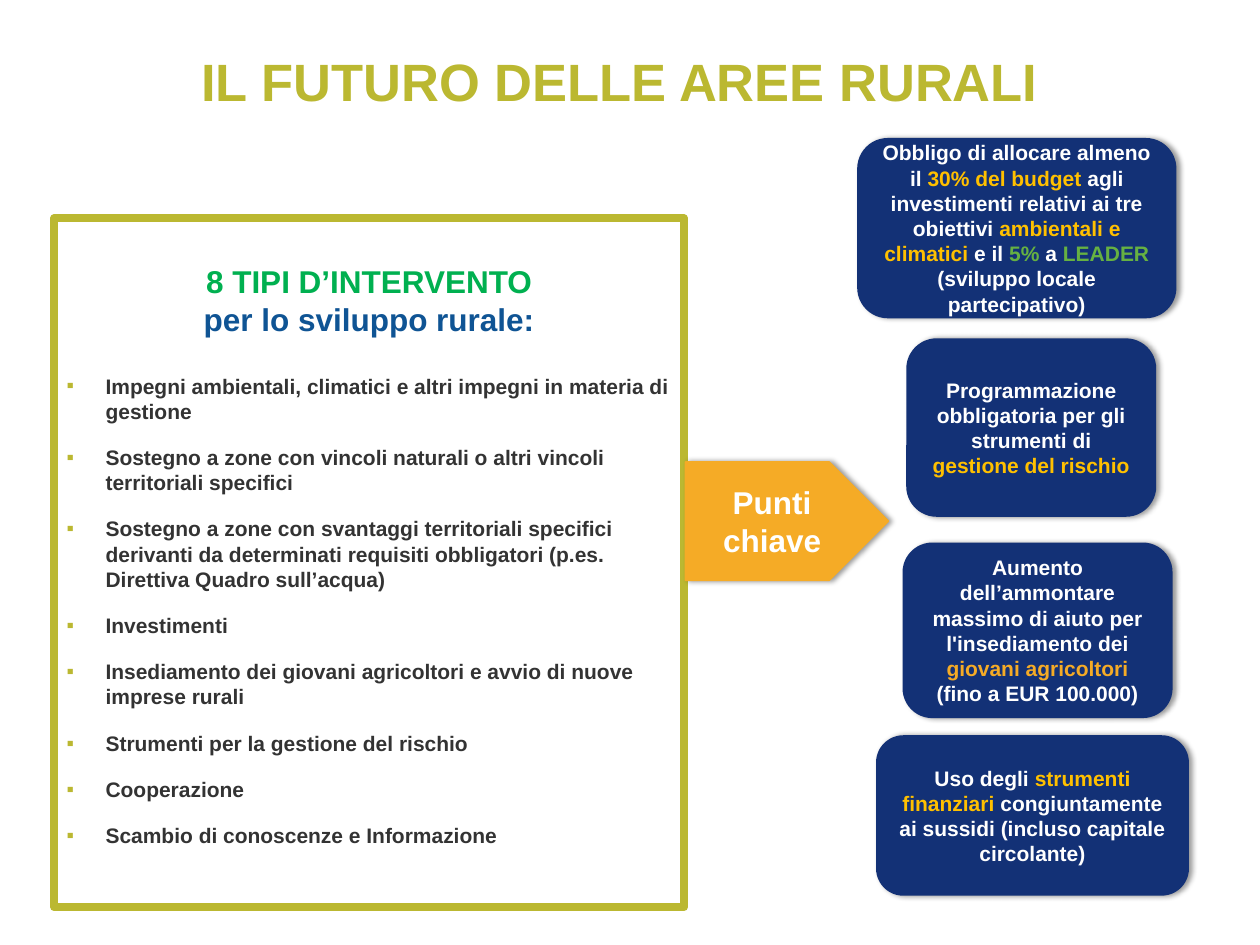
from lxml import etree
from pptx import Presentation, util as u
from pptx.dml.color import RGBColor
from pptx.enum import shapes, text
from pptx.oxml import ns

# Content
TITLE = "IL FUTURO DELLE AREE RURALI"
HEADS = [("8 TIPI D’INTERVENTO", "green"), ("per lo sviluppo rurale:", "blue")]
TYPES = [
    "Impegni ambientali, climatici e altri impegni in materia di gestione",
    "Sostegno a zone con vincoli naturali o altri vincoli territoriali specifici",
    "Sostegno a zone con svantaggi territoriali specifici derivanti da "
    "determinati requisiti obbligatori (p.es. Direttiva Quadro sull’acqua)",
    "Investimenti",
    "Insediamento dei giovani agricoltori e avvio di nuove imprese rurali",
    "Strumenti per la gestione del rischio",
    "Cooperazione",
    "Scambio di conoscenze e Informazione",
]
ARROW = "Punti chiave"
# Key points: place as shares of the slide, then coloured runs
POINTS = [
    ((0.681, 0.147, 0.252, 0.189), [
        ("Obbligo di allocare almeno il ", "white"), ("30% del budget ", "gold"),
        ("agli investimenti relativi ai tre obiettivi ", "white"),
        ("ambientali e climatici ", "gold"), ("e il ", "white"), ("5%", "leaf"),
        (" a ", "white"), ("LEADER ", "leaf"),
        ("(sviluppo locale partecipativo)", "white")]),
    ((0.72, 0.359, 0.197, 0.187), [
        ("Programmazione obbligatoria per gli strumenti di ", "white"),
        ("gestione del rischio", "gold")]),
    ((0.717, 0.575, 0.213, 0.184), [
        ("Aumento dell’ammontare massimo di aiuto per l'insediamento dei ", "white"),
        ("giovani agricoltori", "orange"), None,
        ("(fino a EUR 100.000)", "white")]),
    ((0.696, 0.779, 0.247, 0.168), [
        ("Uso degli ", "white"), ("strumenti finanziari ", "gold"),
        ("congiuntamente ai sussidi (incluso capitale circolante)", "white")]),
]
HUES = {"olive": "BBB831", "green": "00B050", "blue": "0F5494", "ink": "333333",
        "navy": "133176", "gold": "FFC000", "leaf": "66B142",
        "orange": "F5AB26", "white": "FFFFFF"}
WIDE, HIGH = 10, 7.5
KIND = shapes.MSO_SHAPE
ALIGN = text.PP_ALIGN

deck = Presentation()
deck.slide_width, deck.slide_height = u.Inches(WIDE), u.Inches(HIGH)
slide = deck.slides.add_slide(deck.slide_layouts[6])


def hue(name):
    return RGBColor.from_string(HUES[name])


def place(x, y, w, h):
    return [u.Inches(v) for v in (x * WIDE, y * HIGH, w * WIDE, h * HIGH)]


def node(parent, tag, **attrs):
    return etree.SubElement(parent, ns.qn("a:" + tag), attrs)


def style(para, size, color=None, align=ALIGN.CENTER):
    para.alignment = align
    font = para.font
    font.name, font.size, font.bold = "Arial", u.Pt(size), True
    if color:
        font.color.rgb = hue(color)


def hang(para, inch):
    props = para._p.get_or_add_pPr()
    props.set("marL", str(u.Inches(inch)))
    props.set("indent", str(-u.Inches(inch)))
    return props


def write(para, runs):
    for item in runs:
        if item is None:
            para.add_line_break()
            continue
        run = para.add_run()
        run.text = item[0]
        run.font.color.rgb = hue(item[1])


def block(kind, spot, color):
    """Filled shape with a soft shadow to the right; returns its paragraph."""
    shape = slide.shapes.add_shape(kind, *place(*spot))
    shape.shadow.inherit = False
    shape.fill.solid()
    shape.fill.fore_color.rgb = shape.line.color.rgb = hue(color)
    shape.line.width = u.Pt(1)
    glow = node(shape._element.spPr.find(ns.qn("a:effectLst")), "outerShdw",
                blurRad=str(u.Pt(3.1)), dist=str(u.Pt(1.8)), dir="0",
                algn="l", rotWithShape="0")
    node(node(glow, "srgbClr", val="000000"), "alpha", val="40000")
    frame = shape.text_frame
    frame.word_wrap = True
    frame.vertical_anchor = text.MSO_ANCHOR.MIDDLE
    return frame.paragraphs[0]


# Title
frame = slide.shapes.add_textbox(*place(0.15, 0.045, 0.891, 0.105)).text_frame
frame.word_wrap = True
para = frame.paragraphs[0]
para.text = TITLE
hang(para, 0.39)
style(para, 30, "olive", ALIGN.LEFT)

# Framed list of intervention types
box = slide.shapes.add_shape(KIND.RECTANGLE, *place(0.043, 0.231, 0.5, 0.729))
box.shadow.inherit = False
box.fill.background()
box.line.color.rgb, box.line.width = hue("olive"), u.Pt(4.5)
frame = box.text_frame
frame.word_wrap = True
frame.vertical_anchor = text.MSO_ANCHOR.TOP
frame.margin_top = u.Inches(0.35)
for i, (words, color) in enumerate(HEADS):
    para = frame.add_paragraph() if i else frame.paragraphs[0]
    para.text = words
    style(para, 18, color)
para.space_after = u.Pt(14)
for words in TYPES:
    para = frame.add_paragraph()
    para.text = words
    para.space_before = para.space_after = u.Pt(6)
    props = hang(para, 0.31)
    node(node(props, "buClr"), "srgbClr", val=HUES["olive"])
    node(props, "buFont", typeface="Arial")
    node(props, "buChar", char="▪")
    style(para, 12, "ink", ALIGN.LEFT)

# Key points
for spot, runs in POINTS:
    para = block(KIND.FLOWCHART_ALTERNATE_PROCESS, spot, "navy")
    style(para, 12)
    write(para, runs)

# Arrow from the list to the key points
para = block(KIND.PENTAGON, (0.544, 0.489, 0.161, 0.125), "orange")
para.text = ARROW
style(para, 18, "white")

deck.save("out.pptx")
